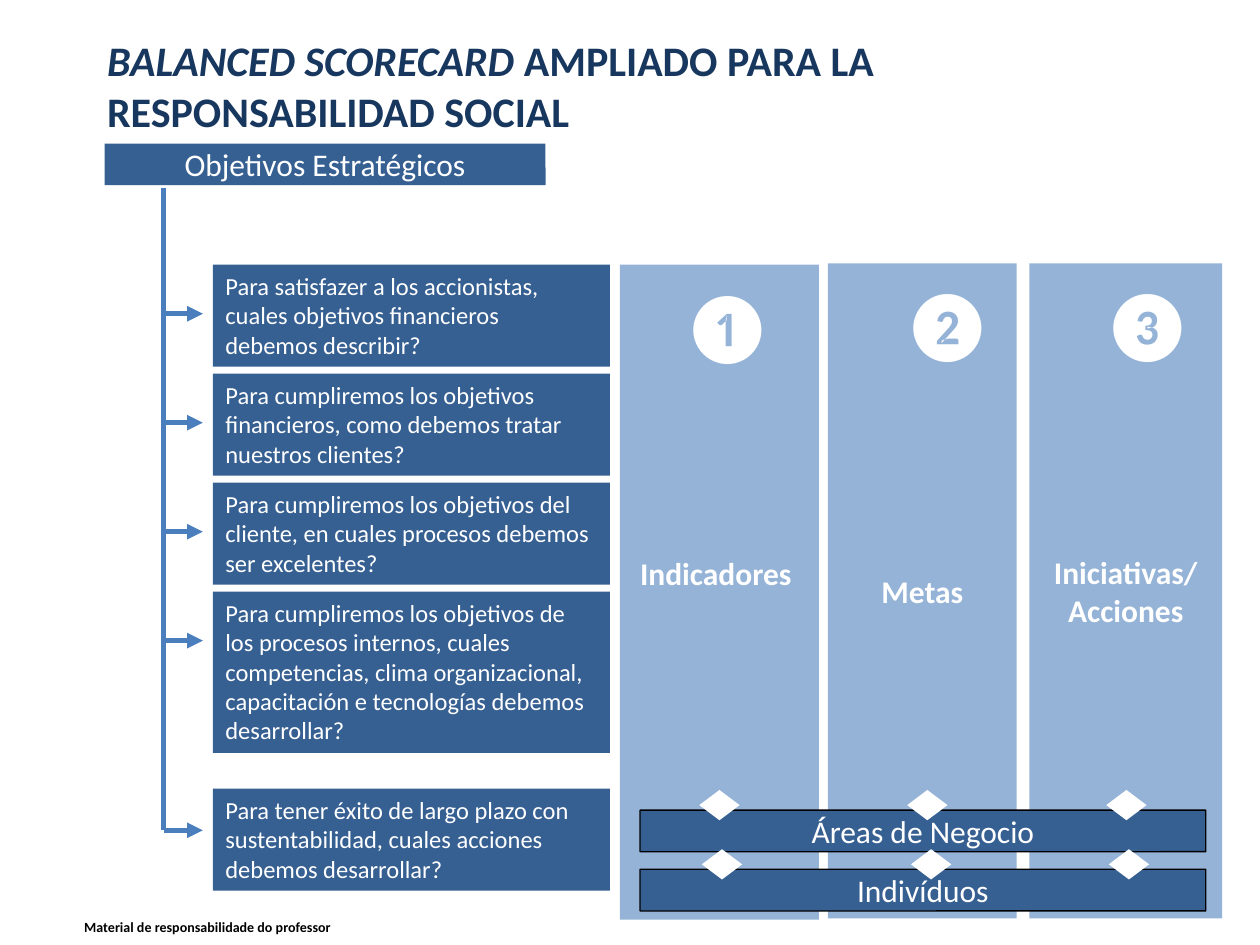
from lxml.etree import SubElement
from pptx import Presentation
from pptx.dml.color import RGBColor
from pptx.enum.shapes import MSO_CONNECTOR as Connector, MSO_SHAPE as Shape
from pptx.enum.text import MSO_ANCHOR as Anchor, PP_ALIGN as Align
from pptx.oxml.ns import qn
from pptx.util import Inches, Pt

NAVY, BLUE, PALE = "17375E", "376092", "95B3D7"
STEM, WHITE, BLACK = "4B7EBC", "FFFFFF", "000000"

ROW_TOP, ROW_PITCH = 2.1, 0.865
QUESTION_LEFT, QUESTION_WIDTH = 1.69, 3.15
STEM_X, BRANCH_END = 1.3, 1.61
LAST_ROW_TOP, STEM_END = 6.26, 6.59

QUESTIONS = [
    ("Para satisfazer a los accionistas, cuales objetivos financieros debemos describir?", 0.81),
    ("Para cumpliremos los objetivos financieros, como debemos tratar nuestros clientes?", 0.81),
    ("Para cumpliremos los objetivos del cliente, en cuales procesos debemos ser excelentes?", 0.81),
    ("Para cumpliremos los objetivos de los procesos internos, cuales competencias, "
     "clima organizacional, capacitación e tecnologías debemos desarrollar?", 1.28),
]
LAST_QUESTION = ("Para tener éxito de largo plazo con sustentabilidad, "
                 "cuales acciones debemos desarrollar?")
COLUMNS = [
    (4.92, 2.1, 1.58, ["Indicadores "], 0.35, "❶", 5.31, 2.19),
    (6.57, 2.09, 1.5, ["Metas"], 0.05, "❷", 7.06, 2.18),
    (8.17, 2.09, 1.53, ["Iniciativas/", "Acciones"], 0.05, "❸", 8.64, 2.18),
]
LEVELS = [("Áreas de Negocio", 6.43), ("Indivíduos", 6.9)]
ARROW_ROWS = [(6.27, (5.55, 7.2, 8.78)), (6.74, (5.57, 7.23, 8.8))]


def rgb(code):
    return RGBColor.from_string(code)


def write(frame, lines, size, color=WHITE, bold=False, align=Align.LEFT,
          anchor=Anchor.TOP, wrap=True):
    frame.word_wrap = wrap
    frame.vertical_anchor = anchor
    for index, line in enumerate(lines):
        paragraph = frame.add_paragraph() if index else frame.paragraphs[0]
        paragraph.text = line
        paragraph.alignment = align
        font = paragraph.font
        font.name, font.size, font.bold = "Calibri", Pt(size), bold
        font.color.rgb = rgb(color)


def add_block(slide, kind, left, top, width, height, fill, outline=None):
    block = slide.shapes.add_shape(
        kind, Inches(left), Inches(top), Inches(width), Inches(height))
    block.shadow.inherit = False
    block.fill.solid()
    block.fill.fore_color.rgb = rgb(fill)
    if outline:
        block.line.color.rgb = rgb(outline)
        block.line.width = Pt(0.75)
    else:
        block.line.fill.background()
    return block


def add_label(slide, left, top, width, height, text, size, color=WHITE, **style):
    label = slide.shapes.add_textbox(
        Inches(left), Inches(top), Inches(width), Inches(height))
    write(label.text_frame, [text], size, color, **style)


def add_bar(slide, left, top, width, text, outline=None):
    bar = add_block(slide, Shape.ROUNDED_RECTANGLE, left, top, width, 0.33, BLUE, outline)
    bar.adjustments[0] = 0.005
    write(bar.text_frame, [text], 18, align=Align.CENTER, anchor=Anchor.MIDDLE, wrap=False)


def add_line(slide, x1, y1, x2, y2, arrow=False):
    line = slide.shapes.add_connector(
        Connector.STRAIGHT, Inches(x1), Inches(y1), Inches(x2), Inches(y2))
    line.line.color.rgb = rgb(STEM)
    line.line.width = Pt(3)
    if arrow:
        SubElement(line.line._get_or_add_ln(), qn("a:tailEnd"), type="triangle")
    SubElement(line._element.spPr, qn("a:effectLst"))


def add_question(slide, text, top, height, branch_y):
    box = add_block(slide, Shape.RECTANGLE, QUESTION_LEFT, top, QUESTION_WIDTH, height, BLUE)
    write(box.text_frame, [text], 14)
    add_line(slide, STEM_X, branch_y, BRANCH_END, branch_y, arrow=True)


def add_column(slide, left, top, width, lines, bottom_inset, number, number_left, number_top):
    column = add_block(slide, Shape.RECTANGLE, left, top, width, 5.2, PALE)
    column.text_frame.margin_bottom = Inches(bottom_inset)
    write(column.text_frame, lines, 18, bold=True, align=Align.CENTER,
          anchor=Anchor.MIDDLE, wrap=False)
    add_label(slide, number_left, number_top, 0.7, 0.77, number, 40, wrap=False)


def set_title(slide):
    title = slide.shapes.title
    title.left, title.top = Inches(0.75), Inches(0.26)
    title.width, title.height = Inches(8.35), Inches(0.83)
    write(title.text_frame, ["", "RESPONSABILIDAD SOCIAL"], 24, NAVY, bold=True,
          anchor=Anchor.MIDDLE, wrap=False)
    first_line = title.text_frame.paragraphs[0]
    term = first_line.add_run()
    term.text = "BALANCED SCORECARD "
    term.font.italic = True
    first_line.add_run().text = "AMPLIADO PARA LA"


def main():
    deck = Presentation()
    deck.slide_width, deck.slide_height = Inches(10), Inches(7.5)
    slide = deck.slides.add_slide(deck.slide_layouts[5])
    set_title(slide)
    add_label(slide, 0.57, 7.24, 5.67, 0.23, "Material de responsabilidade do professor",
              8, BLACK, bold=True)

    add_bar(slide, 0.83, 1.14, 3.5, "Objetivos Estratégicos")
    add_line(slide, STEM_X, 1.49, STEM_X, STEM_END)
    for row, (text, height) in enumerate(QUESTIONS):
        top = ROW_TOP + row * ROW_PITCH
        add_question(slide, text, top, height, top + 0.39)
    add_question(slide, LAST_QUESTION, LAST_ROW_TOP, 0.81, STEM_END)

    for column in COLUMNS:
        add_column(slide, *column)
    for text, top in LEVELS:
        add_bar(slide, 5.08, top, 4.49, text, BLACK)
    for top, lefts in ARROW_ROWS:
        for left in lefts:
            arrow = add_block(slide, Shape.UP_DOWN_ARROW, left, top, 0.32, 0.24, WHITE)
            arrow.adjustments[0], arrow.adjustments[1] = 0.5, 0.2

    deck.save("out.pptx")


if __name__ == "__main__":
    main()
